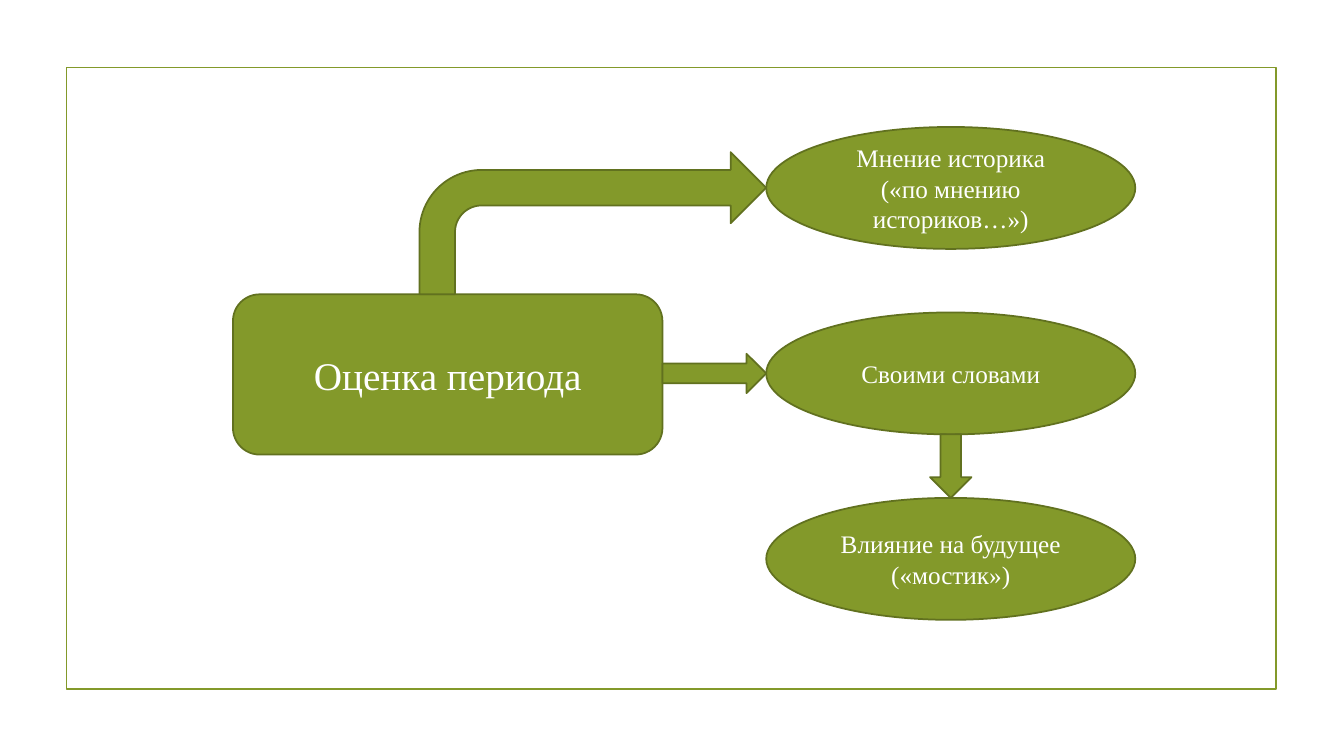
import pptx
import pptx.util
import pptx.dml.color
import pptx.enum.shapes
import pptx.enum.text

RGBColor = pptx.dml.color.RGBColor
OLIVE = RGBColor(0x83, 0x99, 0x2A)
DARK = RGBColor(0x61, 0x71, 0x1F)
WHITE = RGBColor(0xFF, 0xFF, 0xFF)
KIND = pptx.enum.shapes.MSO_SHAPE
FONT = "Times New Roman"

WIDE = pptx.util.Inches(13.33)
HIGH = pptx.util.Inches(7.5)

# Layout, in percent of the slide's width and height
BOX_X, BOX_Y, BOX_W, BOX_H = 17.33, 38.93, 31.96, 21.2
OVAL_X, OVAL_Y, OVAL_W, OVAL_H = 57.01, 16.8, 27.46, 16.13
STEP = 24.53


def shape(slide, kind, x, y, w, h, fill=OLIVE, edge=DARK):
    item = slide.shapes.add_shape(
        kind, round(WIDE * x / 100), round(HIGH * y / 100),
        round(WIDE * w / 100), round(HIGH * h / 100))
    item.shadow.inherit = False
    if fill is None:
        item.fill.background()
    else:
        item.fill.solid()
        item.fill.fore_color.rgb = fill
    item.line.color.rgb = edge
    item.line.width = pptx.util.Pt(1.25)
    return item


def label(item, text, size):
    frame = item.text_frame
    frame.word_wrap = True
    frame.vertical_anchor = pptx.enum.text.MSO_ANCHOR.MIDDLE
    para = frame.paragraphs[0]
    para.alignment = pptx.enum.text.PP_ALIGN.CENTER
    run = para.add_run()
    run.text = text
    run.font.name = FONT
    run.font.size = pptx.util.Pt(size)
    run.font.color.rgb = WHITE


def main():
    deck = pptx.Presentation()
    deck.slide_width, deck.slide_height = WIDE, HIGH
    slide = deck.slides.add_slide(deck.slide_layouts[6])

    # Frame
    shape(slide, KIND.RECTANGLE, 4.95, 8.93, 90.02, 82.27, None, OLIVE)

    # Main topic
    topic = shape(slide, KIND.ROUNDED_RECTANGLE, BOX_X, BOX_Y, BOX_W, BOX_H)
    label(topic, "Оценка периода", 28)

    # Column of ovals
    notes = ("Мнение историка («по мнению историков…»)",
             "Своими словами",
             "Влияние на будущее («мостик»)")
    for row, text in enumerate(notes):
        oval = shape(slide, KIND.OVAL, OVAL_X, OVAL_Y + row * STEP,
                     OVAL_W, OVAL_H)
        label(oval, text, 18)

    # Arrow from the topic up to the first oval
    bend_x, bend_y = 31.21, 20.13
    shape(slide, KIND.BENT_ARROW, bend_x, bend_y,
          OVAL_X - bend_x, BOX_Y - bend_y)

    # Arrow from the topic to the second oval
    right, thick = BOX_X + BOX_W, 5.2
    middle = OVAL_Y + STEP + OVAL_H / 2
    shape(slide, KIND.RIGHT_ARROW, right, middle - thick / 2,
          OVAL_X - right, thick)

    # Arrow from the second oval to the third
    broad = 3.08
    shape(slide, KIND.DOWN_ARROW, OVAL_X + (OVAL_W - broad) / 2,
          OVAL_Y + STEP + OVAL_H, broad, STEP - OVAL_H)

    deck.save("out.pptx")


if __name__ == "__main__":
    main()
